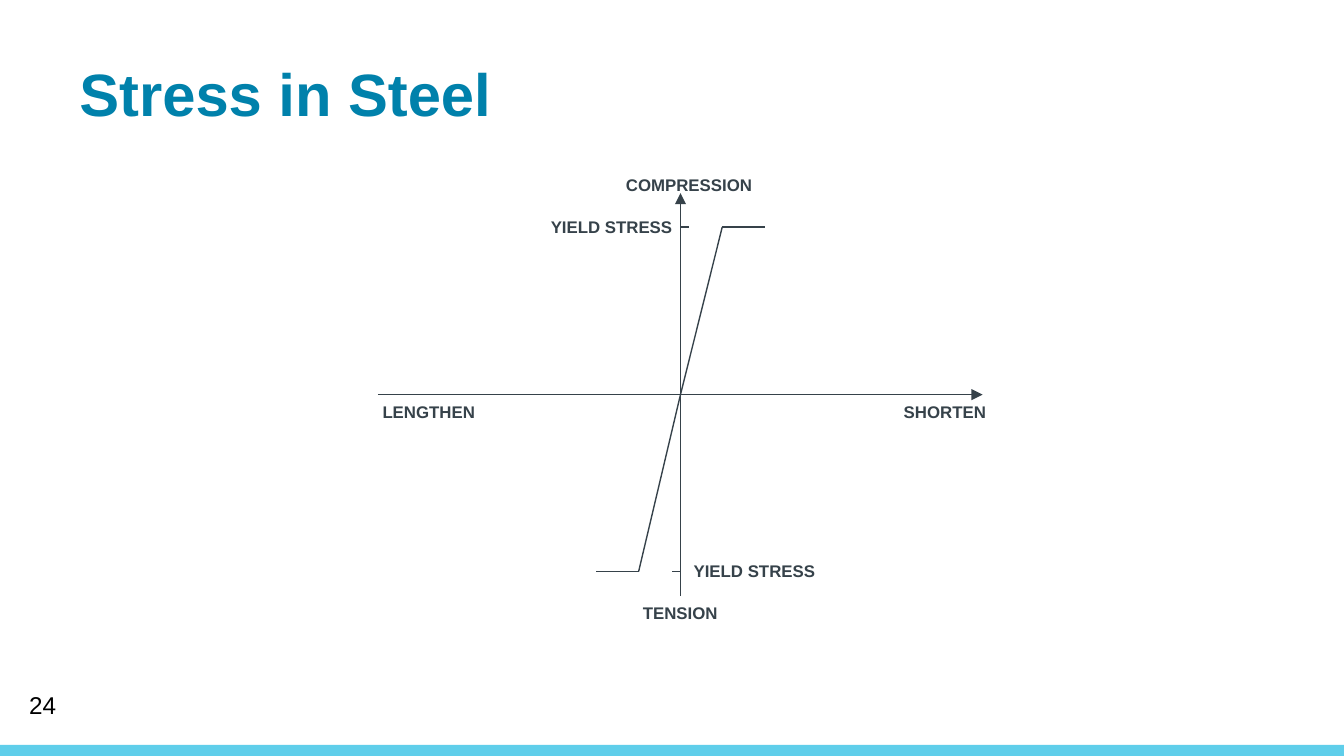
from itertools import pairwise

from lxml import etree
from pptx import Presentation
from pptx.dml.color import RGBColor
from pptx.enum.shapes import MSO_CONNECTOR, MSO_SHAPE
from pptx.enum.text import MSO_ANCHOR, MSO_AUTO_SIZE, PP_ALIGN
from pptx.oxml.ns import qn
from pptx.util import Cm, Pt

STRAIGHT = MSO_CONNECTOR.STRAIGHT
RECTANGLE = MSO_SHAPE.RECTANGLE
TOP, MIDDLE = MSO_ANCHOR.TOP, MSO_ANCHOR.MIDDLE
FIT_SHAPE, NO_FIT = MSO_AUTO_SIZE.SHAPE_TO_FIT_TEXT, MSO_AUTO_SIZE.NONE
LEFT = PP_ALIGN.LEFT

BLUE = RGBColor(0x00, 0x81, 0xAB)
SKY = RGBColor(0x5F, 0xCE, 0xEA)
SLATE = RGBColor(0x36, 0x42, 0x4A)
BLACK = RGBColor(0x00, 0x00, 0x00)

prs = Presentation()
prs.slide_width, prs.slide_height = Cm(25.4), Cm(14.29)
slide = prs.slides.add_slide(prs.slide_layouts[5])
shapes = slide.shapes


def add_line(start, end, arrow=False):
    line = shapes.add_connector(STRAIGHT, *map(Cm, start + end))
    line.line.color.rgb = SLATE
    line.line.width = Pt(0.75)
    if arrow:
        etree.SubElement(line.line._get_or_add_ln(), qn("a:tailEnd"), type="triangle")
    etree.SubElement(line._element.spPr, qn("a:effectLst"))


def set_text(holder, text, size, color, bold=False):
    holder.text_frame.text = text
    paragraph = holder.text_frame.paragraphs[0]
    paragraph.alignment = LEFT
    paragraph.font.name = "Arial"
    paragraph.font.size = Pt(size)
    paragraph.font.bold = bold
    paragraph.font.color.rgb = color


# Bottom band
band = shapes.add_shape(RECTANGLE, 0, Cm(14.08), prs.slide_width, Cm(0.21))
band.shadow.inherit = False
band.fill.solid()
band.fill.fore_color.rgb = SKY
band.line.fill.background()

# Title
title = shapes.title
title.left, title.top, title.width, title.height = Cm(1.5), Cm(0.94), Cm(22.83), Cm(1.45)
set_text(title, "Stress in Steel", 32, BLUE, bold=True)
title.text_frame.margin_left = 0
title.text_frame.vertical_anchor = TOP
title.text_frame.auto_size = NO_FIT

# Axes
origin_x, origin_y = 12.86, 7.46
add_line((7.14, origin_y), (18.57, origin_y), arrow=True)
add_line((origin_x, 11.27), (origin_x, 3.65), arrow=True)

# Stress curve: yields in tension, elastic through the origin, yields in compression
compression_y, tension_y = 4.29, 10.8
curve = [
    (11.27, tension_y),
    (12.07, tension_y),
    (origin_x, origin_y),
    (13.65, compression_y),
    (14.45, compression_y),
]
for start, end in pairwise(curve):
    add_line(start, end)

# Yield ticks
for tick_y, tick_length in ((compression_y, 0.16), (tension_y, -0.16)):
    add_line((origin_x, tick_y), (origin_x + tick_length, tick_y))

# Labels
labels = [
    ("SHORTEN", 16.83, 7.46, 2.08),
    ("LENGTHEN", 6.98, 7.46, 2.29),
    ("TENSION", 11.9, 11.27, 1.93),
    ("COMPRESSION", 11.58, 3.18, 2.92),
    ("YIELD STRESS", 12.86, 10.48, 2.82),
    ("YIELD STRESS", 10.16, 3.97, 2.82),
]
for text, left, top, width in labels:
    label = shapes.add_textbox(Cm(left), Cm(top), Cm(width), Cm(0.64))
    label.text_frame.word_wrap = False
    label.text_frame.auto_size = FIT_SHAPE
    set_text(label, text, 9, SLATE, bold=True)

# Page number
page_number = shapes.add_textbox(Cm(0.3), Cm(12.95), Cm(5.72), Cm(0.76))
page_number.text_frame.word_wrap = True
page_number.text_frame.vertical_anchor = MIDDLE
set_text(page_number, "24", 13, BLACK)

prs.save("out.pptx")
